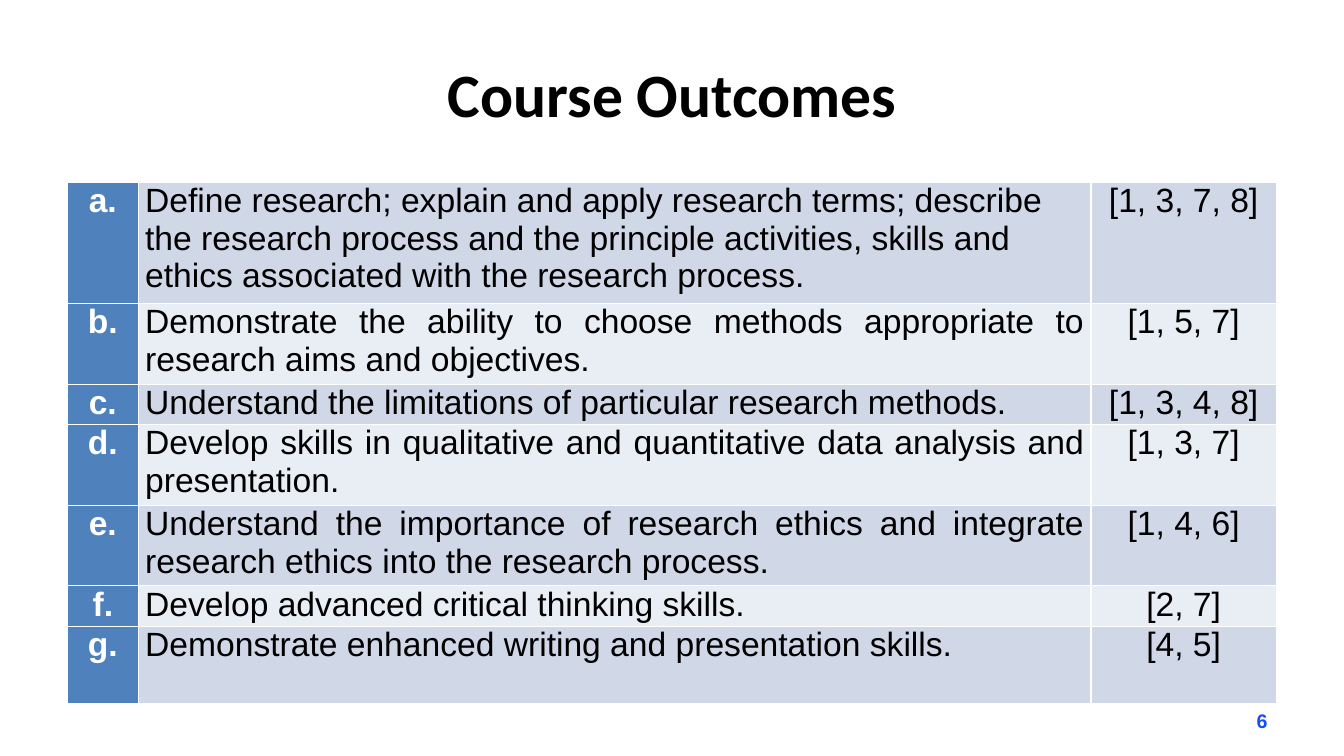
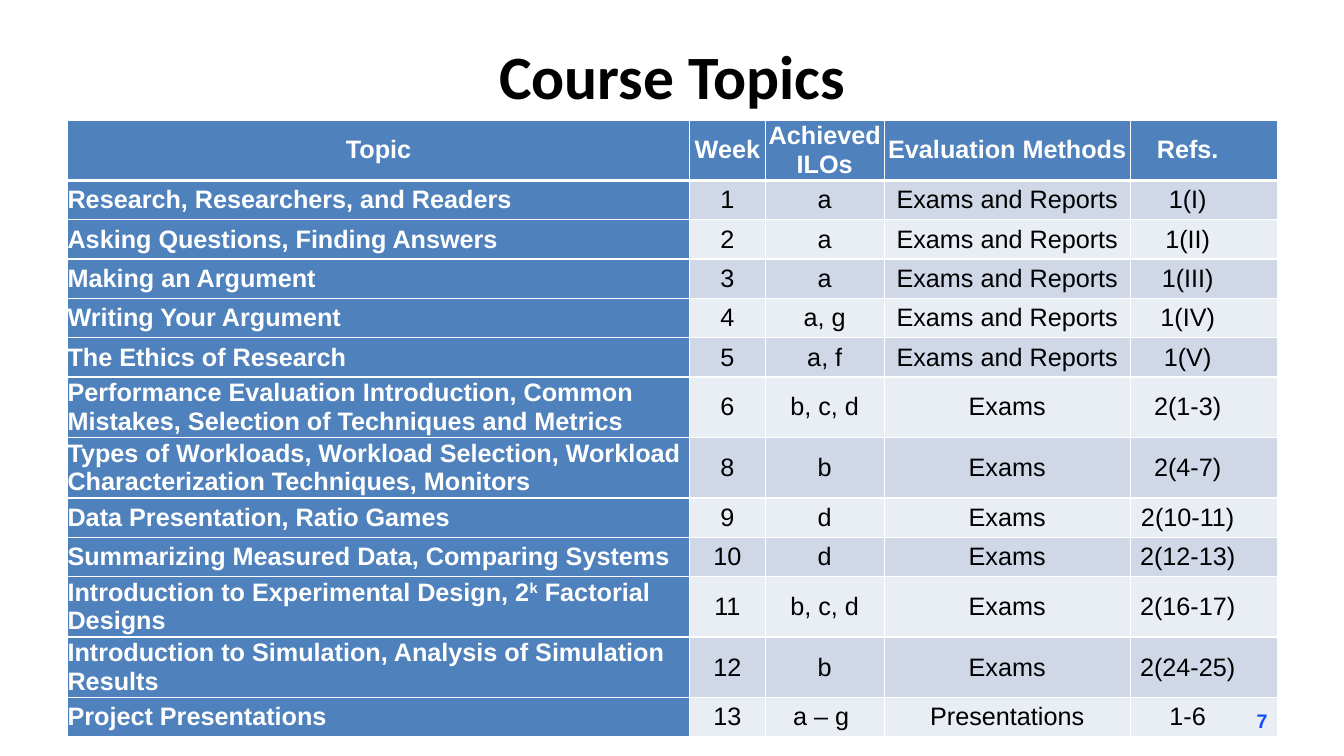
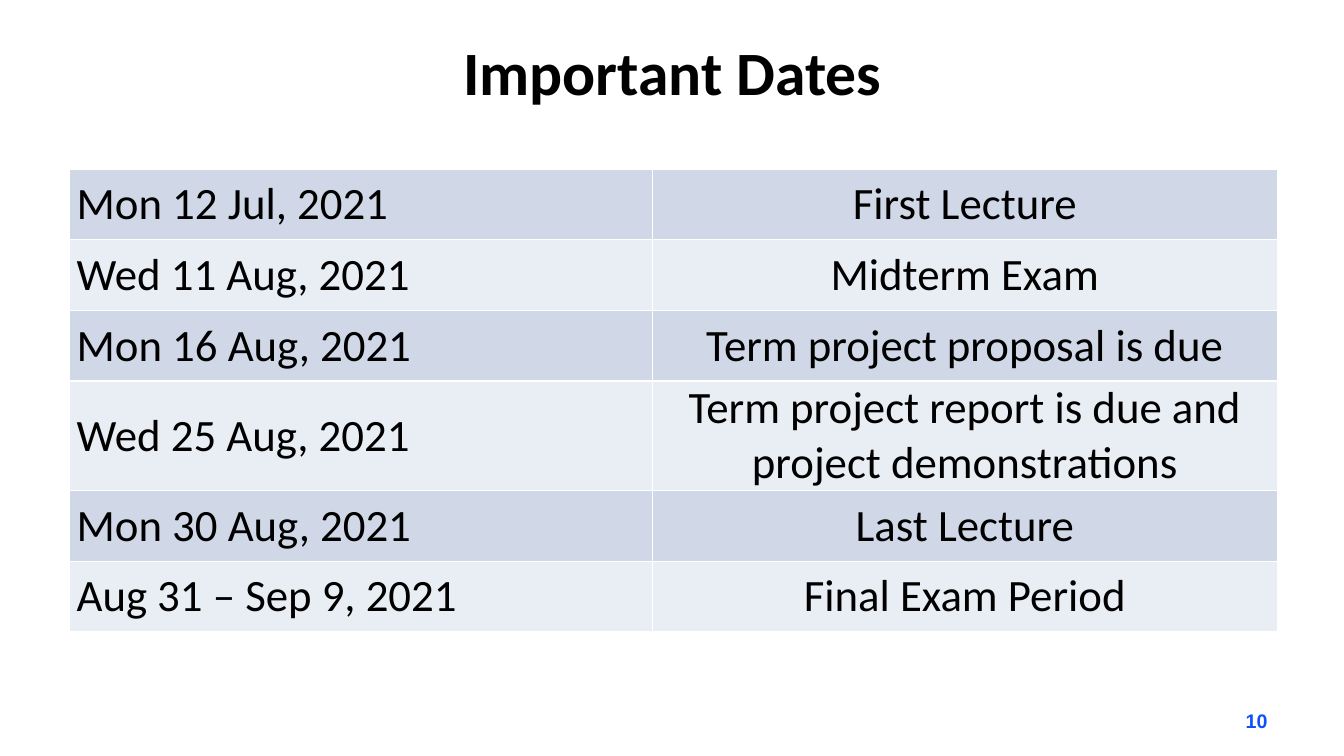
from lxml import etree
from pptx import Presentation
from pptx.dml.color import RGBColor
from pptx.enum.text import MSO_ANCHOR, PP_ALIGN
from pptx.oxml.ns import qn
from pptx.util import Inches, Pt

LEFT, CENTER, RIGHT, JUSTIFY = PP_ALIGN.LEFT, PP_ALIGN.CENTER, PP_ALIGN.RIGHT, PP_ALIGN.JUSTIFY
TOP, MIDDLE = MSO_ANCHOR.TOP, MSO_ANCHOR.MIDDLE

BLACK = RGBColor(0x00, 0x00, 0x00)
WHITE = RGBColor(0xFF, 0xFF, 0xFF)
HEADING_BLUE = RGBColor(0x4F, 0x81, 0xBD)
BANDS = (RGBColor(0xD0, 0xD8, 0xE8), RGBColor(0xE9, 0xED, 0xF4))
NUMBER_BLUE = RGBColor(0x11, 0x4F, 0xFB)

LINE = 0.39
OUTCOMES = [
    ("a.", "Define research; explain and apply research terms; describe the research process and "
           "the principle activities, skills and ethics associated with the research process.",
     "[1, 3, 7, 8]"),
    ("b.", "Demonstrate the ability to choose methods appropriate to research aims and objectives.",
     "[1, 5, 7]"),
    ("c.", "Understand the limitations of particular research methods.", "[1, 3, 4, 8]"),
    ("d.", "Develop skills in qualitative and quantitative data analysis and presentation.",
     "[1, 3, 7]"),
    ("e.", "Understand the importance of research ethics and integrate research ethics into the "
           "research process.", "[1, 4, 6]"),
    ("f.", "Develop advanced critical thinking skills.", "[2, 7]"),
    ("g.", "Demonstrate enhanced writing and presentation skills.", "[4, 5]"),
]
TOPICS = [
    ("Topic", "Week", "Achieved ILOs", "Evaluation Methods", "Refs."),
    ("Research, Researchers, and Readers", "1", "a", "Exams and Reports", "1(I)"),
    ("Asking Questions, Finding Answers", "2", "a", "Exams and Reports", "1(II)"),
    ("Making an Argument", "3", "a", "Exams and Reports", "1(III)"),
    ("Writing Your Argument", "4", "a, g", "Exams and Reports", "1(IV)"),
    ("The Ethics of Research", "5", "a, f", "Exams and Reports", "1(V)"),
    ("Performance Evaluation Introduction, Common Mistakes, Selection of Techniques and Metrics",
     "6", "b, c, d", "Exams", "2(1-3)"),
    ("Types of Workloads, Workload Selection, Workload Characterization Techniques, Monitors",
     "8", "b", "Exams", "2(4-7)"),
    ("Data Presentation, Ratio Games", "9", "d", "Exams", "2(10-11)"),
    ("Summarizing Measured Data, Comparing Systems", "10", "d", "Exams", "2(12-13)"),
    (("Introduction to Experimental Design, 2", "^k", " Factorial Designs"),
     "11", "b, c, d", "Exams", "2(16-17)"),
    ("Introduction to Simulation, Analysis of Simulation Results",
     "12", "b", "Exams", "2(24-25)"),
    ("Project Presentations", "13", "a – g ", "Presentations", "1-6"),
]
DATES = [
    ("Mon 12 Jul, 2021", "First Lecture"),
    ("Wed 11 Aug, 2021", "Midterm Exam"),
    ("Mon 16 Aug, 2021", "Term project proposal is due"),
    ("Wed 25 Aug, 2021", "Term project report is due and project demonstrations"),
    ("Mon 30 Aug, 2021", "Last Lecture"),
    ("Aug 31 – Sep 9, 2021", "Final Exam Period"),
]


class Deck:
    def __init__(self):
        self.presentation = Presentation()
        self.presentation.slide_width = Inches(13.33)
        self.presentation.slide_height = Inches(7.5)
        self.slide = None

    def start_slide(self):
        self.slide = self.presentation.slides.add_slide(self.presentation.slide_layouts[6])

    def add_runs(self, frame, text, size, font, color, bold, align):
        """Fill a frame; a tuple is a list of runs, and "^" opens a superscript run."""
        paragraph = frame.paragraphs[0]
        paragraph.alignment = align
        for part in (text,) if isinstance(text, str) else text:
            run = paragraph.add_run()
            run.text = part.removeprefix("^")
            run.font.size, run.font.name, run.font.bold = Pt(size), font, bold
            run.font.color.rgb = color
            if part.startswith("^"):
                run.font._element.set("baseline", "30000")

    def text(self, text, left, top, width, height, *style):
        box = self.slide.shapes.add_textbox(
            Inches(left), Inches(top), Inches(width), Inches(height))
        box.text_frame.word_wrap = True
        box.text_frame.vertical_anchor = MIDDLE
        self.add_runs(box.text_frame, text, *style)

    def title(self, text, left, top, width, height):
        self.text(text, left, top, width, height, 44, "Calibri", BLACK, True, CENTER)

    def page_number(self, number):
        self.text(str(number), 9.56, 6.95, 3.11, 0.4, 14, "Arial", NUMBER_BLUE, True, RIGHT)

    def border(self, cell, bottom):
        properties = cell._tc.get_or_add_tcPr()
        for side, points in (("L", 1), ("R", 1), ("T", 1), ("B", bottom)):
            line = etree.SubElement(properties, qn(f"a:ln{side}"), w=str(Pt(points)))
            fill = etree.SubElement(line, qn("a:solidFill"))
            etree.SubElement(fill, qn("a:srgbClr"), val=str(WHITE))

    def table(self, rows, left, top, widths, heights, aligns, size, font="Arial", anchor=MIDDLE,
              inset=0.07, last_inset=None, header=False, row_heads=True):
        """Draw a banded table; header and row_heads colour the first row and column."""
        table = self.slide.shapes.add_table(
            len(rows), len(widths), Inches(left), Inches(top),
            Inches(sum(widths)), Inches(sum(heights))).table
        table.first_row = table.horz_banding = False
        for column, width in zip(table.columns, widths):
            column.width = Inches(width)
        for row, height in zip(table.rows, heights):
            row.height = Inches(height)
        for row_index, values in enumerate(rows):
            in_header = header and row_index == 0
            band = BANDS[(row_index - header) % 2]
            for column_index, value in enumerate(values):
                cell = table.cell(row_index, column_index)
                is_head = in_header or (row_heads and column_index == 0)
                is_last = column_index == len(widths) - 1
                right = last_inset if is_last and last_inset is not None else inset
                cell.margin_left, cell.margin_right = Inches(inset), Inches(right)
                cell.margin_top = cell.margin_bottom = 0
                cell.vertical_anchor = anchor
                self.border(cell, 3 if in_header else 1)
                cell.fill.solid()
                cell.fill.fore_color.rgb = HEADING_BLUE if is_head else band
                align = CENTER if in_header else aligns[column_index]
                if align == JUSTIFY and row_index == 0:
                    align = LEFT
                self.add_runs(cell.text_frame, value, size, font,
                              WHITE if is_head else BLACK, is_head, align)


def main():
    deck = Deck()

    deck.start_slide()
    deck.title("Course Outcomes", 0.67, 0.3, 12, 1.25)
    deck.table(OUTCOMES, 0.67, 1.81, (0.7, 9.45, 1.84),
               (1.16, 0.77, LINE, 0.75, 0.77, LINE, 0.77),
               (CENTER, JUSTIFY, CENTER), 24, anchor=TOP)
    deck.page_number(6)

    deck.start_slide()
    deck.title("Course Topics", 2.17, 0.3, 9, 0.89)
    two_line_rows = (6, 7, 10, 11)
    heights = [0.59] + [0.56 if row in two_line_rows else LINE for row in range(1, len(TOPICS))]
    deck.table(TOPICS, 0.67, 1.19, (6.17, 0.75, 1.18, 2.44, 1.46), heights,
               (LEFT,) + (CENTER,) * 4, 18, inset=0, last_inset=0.32, header=True)
    deck.page_number(7)

    deck.start_slide()
    deck.title("Important Dates", 2.17, 0.08, 9, 1.25)
    deck.table(DATES, 0.69, 1.68, (5.78, 6.2), (0.7, 0.7, 0.7, 1.09, 0.7, 0.7),
               (LEFT, CENTER), 32, font="Calibri", row_heads=False)
    deck.page_number(10)

    deck.presentation.save("out.pptx")


if __name__ == "__main__":
    main()
